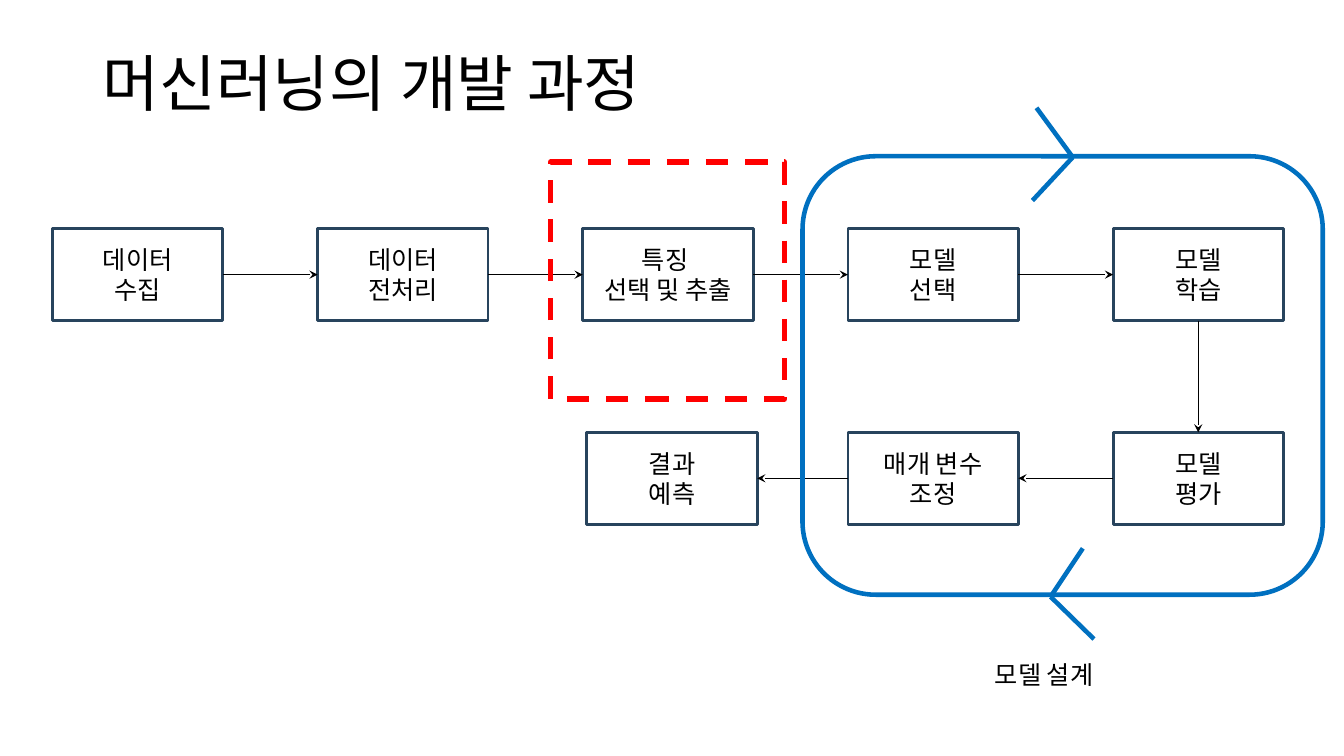
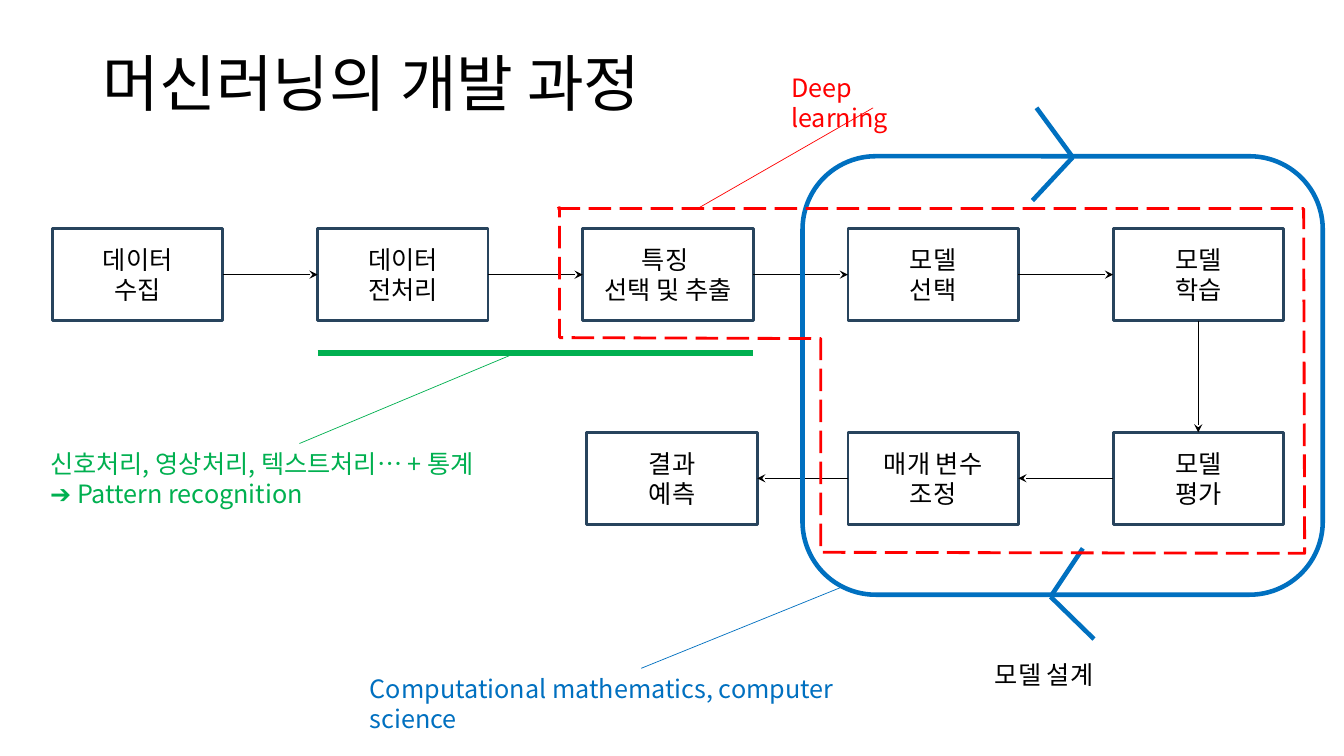
from pptx import Presentation
from pptx.dml.color import RGBColor
from pptx.enum.dml import MSO_LINE
from pptx.enum.shapes import MSO_CONNECTOR, MSO_SHAPE
from pptx.enum.text import MSO_ANCHOR, MSO_AUTO_SIZE, PP_ALIGN
from pptx.oxml.ns import qn
from pptx.util import Pt
from lxml.etree import SubElement

PX = 9144
FONT = "Noto Sans CJK KR"
BLACK, NAVY, BLUE = "000000", "28445D", "0070C0"
GREEN, RED = "00B050", "FF0000"

STEP_LEFT, STEP_PITCH, STEP_WIDTH, STEP_HEIGHT = 52, 263, 169, 91
TOP_ROW, BOTTOM_ROW = 227, 429
TOP, LEFT, BOTTOM, RIGHT = range(4)


def px(*lengths):
    return [length * PX for length in lengths]


def color(value):
    return RGBColor.from_string(value)


def column(index):
    return STEP_LEFT + index * STEP_PITCH


def write(frame, text, size=18, hue=BLACK, align=PP_ALIGN.LEFT):
    frame.text = text
    for para in frame.paragraphs:
        para.alignment = align
        for span in para.runs:
            span.font.size = Pt(size)
            span.font.name = FONT
            span.font.color.rgb = color(hue)
            SubElement(span.font._element, qn("a:ea"), typeface=FONT)


def set_line(shape, hue, weight, dash=None):
    shape.line.color.rgb = color(hue)
    shape.line.width = Pt(weight)
    if dash:
        shape.line.dash_style = dash


def set_outline(shape, hue, weight, dash=None):
    shape.shadow.inherit = False
    shape.fill.background()
    set_line(shape, hue, weight, dash)


def add_outline(page, kind, bounds, hue, weight, dash=None):
    box = page.shapes.add_shape(kind, *px(*bounds))
    set_outline(box, hue, weight, dash)
    return box


def add_line(page, start, end, hue, weight):
    line = page.shapes.add_connector(MSO_CONNECTOR.STRAIGHT, *px(*start, *end))
    set_line(line, hue, weight)
    SubElement(line._element.spPr, qn("a:effectLst"))
    return line


def add_arrow(page, source, source_side, target, target_side):
    arrow = add_line(page, (0, 0), (0, 0), BLACK, 0.5)
    arrow.begin_connect(source, source_side)
    arrow.end_connect(target, target_side)
    SubElement(arrow.line._get_or_add_ln(), qn("a:tailEnd"), type="stealth")


def add_label(page, bounds, text, hue):
    box = page.shapes.add_textbox(*px(*bounds))
    box.text_frame.word_wrap = True
    write(box.text_frame, text, hue=hue)


def add_step(page, left, top, text):
    bounds = left, top, STEP_WIDTH, STEP_HEIGHT
    box = add_outline(page, MSO_SHAPE.RECTANGLE, bounds, NAVY, 2)
    box.text_frame.vertical_anchor = MSO_ANCHOR.MIDDLE
    write(box.text_frame, text, align=PP_ALIGN.CENTER)
    return box


def add_title(page, text):
    title = page.shapes.title
    title.left, title.top, title.width, title.height = px(92, 40, 1150, 91)
    frame = title.text_frame
    frame.auto_size = MSO_AUTO_SIZE.NONE
    frame.vertical_anchor = MSO_ANCHOR.MIDDLE
    write(frame, text, size=44)
    frame.paragraphs[0].line_spacing = 0.9


def add_workflow(page):
    top_texts = ("데이터\n수집", "데이터\n전처리", "특징 \n선택 및 추출",
                 "모델\n선택", "모델\n학습")
    top_steps = [add_step(page, column(index), TOP_ROW, text)
                 for index, text in enumerate(top_texts)]
    bottom_steps = [add_step(page, left, BOTTOM_ROW, text) for left, text in (
        (column(4), "모델\n평가"), (column(3), "매개 변수\n조정"),
        (582, "결과\n예측"))]
    for source, target in zip(top_steps, top_steps[1:]):
        add_arrow(page, source, RIGHT, target, LEFT)
    add_arrow(page, top_steps[-1], BOTTOM, bottom_steps[0], TOP)
    for source, target in zip(bottom_steps, bottom_steps[1:]):
        add_arrow(page, source, LEFT, target, RIGHT)


def add_design_loop(page):
    add_outline(page, MSO_SHAPE.ROUNDED_RECTANGLE, (796, 155, 516, 435),
                BLUE, 3.25)
    chevrons = (((1042, 592), (1074, 544), (1085, 634)),
                ((1064, 156), (1028, 107), (1024, 199)))
    for tip, *ends in chevrons:
        for end in ends:
            add_line(page, end, tip, BLUE, 3.25)
    add_label(page, (977, 649, 130, 40), "모델 설계", BLACK)


def add_process_page(deck):
    page = deck.slides.add_slide(deck.slide_layouts[5])
    add_title(page, "머신러닝의 개발 과정")
    add_workflow(page)
    add_design_loop(page)
    return page


def add_feature_highlight(page):
    add_outline(page, MSO_SHAPE.RECTANGLE, (546, 161, 232, 235),
                RED, 4, MSO_LINE.DASH)


def add_field_notes(page):
    add_line(page, (column(1), 350), (column(2) + STEP_WIDTH, 350), GREEN, 4.5)
    add_label(page, (40, 440, 516, 71),
              "신호처리, 영상처리, 텍스트처리… + 통계\n➔ Pattern recognition",
              GREEN)
    add_line(page, (297, 440), (512, 350), GREEN, 0.5)
    add_label(page, (357, 663, 530, 71),
              "Computational mathematics, computer science", BLUE)
    add_line(page, (636, 663), (836, 582), BLUE, 0.5)

    builder = page.shapes.build_freeform(553, 207, scale=PX)
    builder.add_line_segments([(1293, 207), (1294, 549), (814, 548),
                               (814, 336), (555, 335), (555, 206)])
    set_outline(builder.convert_to_shape(), RED, 2, MSO_LINE.LONG_DASH)
    add_label(page, (775, 67, 150, 71), "Deep learning", RED)
    add_line(page, (690, 208), (866, 107), RED, 0.5)


def main():
    deck = Presentation()
    deck.slide_width, deck.slide_height = px(1333, 750)
    add_feature_highlight(add_process_page(deck))
    add_field_notes(add_process_page(deck))
    deck.save("out.pptx")


if __name__ == "__main__":
    main()
